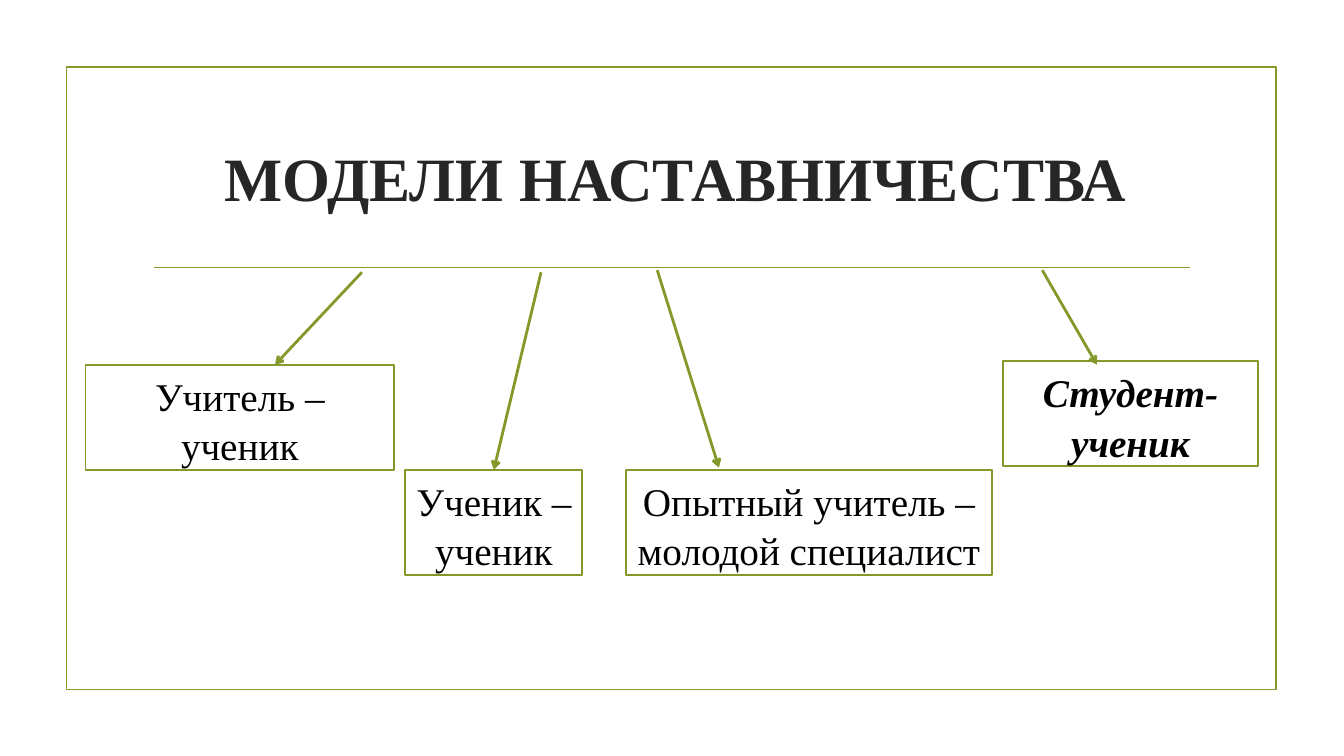
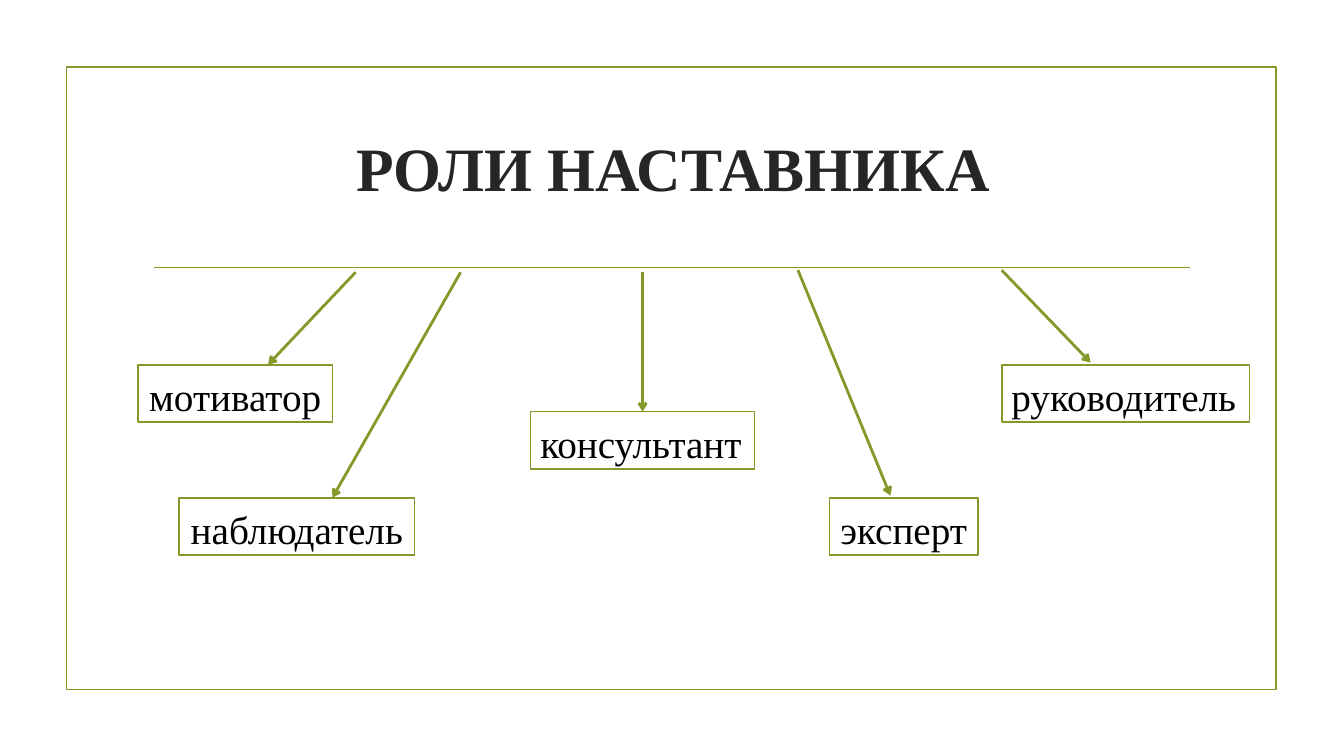
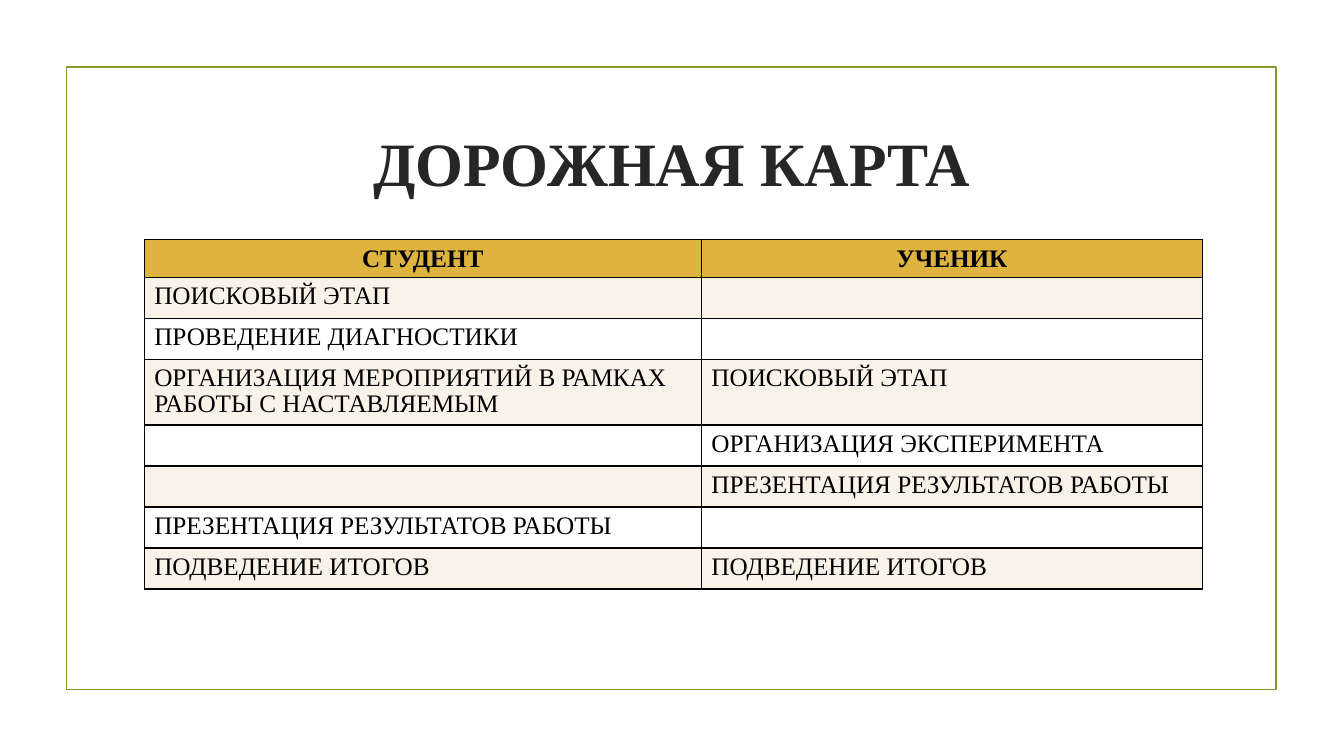
from lxml.etree import SubElement
from pptx import Presentation
from pptx.dml.color import RGBColor
from pptx.enum.shapes import MSO_CONNECTOR as Connector, MSO_SHAPE as Shape
from pptx.enum.text import MSO_ANCHOR as Anchor, PP_ALIGN as Align
from pptx.oxml.ns import qn
from pptx.util import Pt

FONT = "Times New Roman"
OLIVE, INK, BLACK, WHITE = "83992A", "262626", "000000", "FFFFFF"
GOLD, CREAM = "DEB340", "F9F2E8"
DIAGRAM_BOX = (48, 191, 864, 301)


def color(hex_string):
    """Return the colour for a hex string."""
    return RGBColor.from_string(hex_string)


def style(paragraph, size, ink=BLACK, align=Align.LEFT, bold=False, italic=False):
    """Set the alignment and font of a whole paragraph."""
    paragraph.alignment = align
    font = paragraph.font
    font.name, font.size, font.bold, font.italic = FONT, Pt(size), bold, italic
    font.color.rgb = color(ink)


def add_panel(slide, left, top, width, height, fill=None):
    """Add an olive-outlined rectangle."""
    panel = slide.shapes.add_shape(Shape.RECTANGLE, Pt(left), Pt(top), Pt(width), Pt(height))
    panel.shadow.inherit = False
    if fill:
        panel.fill.solid()
        panel.fill.fore_color.rgb = color(fill)
    else:
        panel.fill.background()
    panel.line.color.rgb = color(OLIVE)
    panel.line.width = Pt(1.25)
    return panel


def add_line(slide, start, end, width, arrow=False):
    """Add a straight olive line, with an arrowhead at its end if asked."""
    line = slide.shapes.add_connector(Connector.STRAIGHT, *map(Pt, start + end))
    line.line.color.rgb = color(OLIVE)
    line.line.width = Pt(width)
    if arrow:
        SubElement(line.line._get_or_add_ln(), qn("a:tailEnd"), type="arrow")
    SubElement(line.element.spPr, qn("a:effectLst"))
    return line


def decorate_layout(layout, slide):
    """Put the frame and the rule under the title on the shared layout."""
    frame = add_panel(slide, 47.5, 48, 864, 444.5)
    rule = add_line(slide, (110, 191), (850, 191), 1.25)
    for number, part in enumerate((frame, rule), 101):
        part.element.xpath(".//p:cNvPr")[0].set("id", str(number))
        layout.shapes.element.append(part.element)


def add_title(slide, text, box):
    """Fill and place the title placeholder."""
    title = slide.shapes.title
    title.left, title.top, title.width, title.height = map(Pt, box)
    title.text_frame.text = text
    title.text_frame.vertical_anchor = Anchor.MIDDLE
    style(title.text_frame.paragraphs[0], 44, INK, Align.CENTER, bold=True)


def add_branches(slide, box, height, branches):
    """Draw labelled boxes and the arrows that lead to them from the rule."""
    x, y = box[:2]
    for text, (left, top, width), start, tip, look in branches:
        label = add_panel(slide, x + left, y + top, width, height, WHITE)
        frame = label.text_frame
        frame.word_wrap = True
        frame.vertical_anchor = Anchor.TOP
        frame.margin_left = frame.margin_right = Pt(7)
        frame.text = text
        style(frame.paragraphs[0], 28, **{"align": Align.CENTER, **look})
        frame.paragraphs[0].line_spacing = 1.05
        end = tip or (left + width / 2, top)
        arrow = add_line(slide, (x + start[0], y + start[1]), (x + end[0], y + end[1]), 2, arrow=True)
        if tip is None:
            arrow.end_connect(label, 0)


def outline_cell(cell):
    """Give a cell thin black borders on all sides."""
    properties = cell._tc.get_or_add_tcPr()
    for position, side in enumerate(("lnL", "lnR", "lnT", "lnB")):
        border = SubElement(properties, qn(f"a:{side}"), w=str(Pt(1)))
        SubElement(SubElement(border, qn("a:solidFill")), qn("a:srgbClr"), val=BLACK)
        properties.insert(position, border)


def add_roadmap(slide, box, columns, heights, rows):
    """Build the two-column table of stages."""
    table = slide.shapes.add_table(len(rows), len(columns), *map(Pt, box)).table
    table.horz_banding = False
    for column, width in zip(table.columns, columns):
        column.width = Pt(width)
    for index, (row, height, texts) in enumerate(zip(table.rows, heights, rows)):
        row.height = Pt(height)
        header = index == 0
        for cell, text in zip(row.cells, texts):
            cell.text = text
            cell.margin_top, cell.margin_bottom = Pt(5), Pt(3)
            cell.fill.solid()
            cell.fill.fore_color.rgb = color(GOLD if header else CREAM if index % 2 else WHITE)
            outline_cell(cell)
            paragraph = cell.text_frame.paragraphs[0]
            paragraph.line_spacing = 0.93
            style(paragraph, 18, align=Align.CENTER if header else Align.LEFT, bold=header)


def main():
    """Build and save the presentation."""
    deck = Presentation()
    deck.slide_width, deck.slide_height = Pt(960), Pt(540)
    layout = deck.slide_layouts[5]
    models, roles, roadmap = (deck.slides.add_slide(layout) for _ in range(3))
    decorate_layout(layout, models)

    add_title(models, "МОДЕЛИ НАСТАВНИЧЕСТВА", (81, 74, 803, 105))
    add_branches(models, DIAGRAM_BOX, 75, [
        ("Учитель – ученик", (13, 69.5, 220.5), (210.5, 3.5), (148.5, 69.5), {}),
        ("Ученик – ученик", (241.5, 144.5, 126.5), (338.5, 3.5), None, {}),
        ("Опытный учитель – молодой специалист", (399, 144.5, 261.5), (421.5, 2), (465.5, 143), {}),
        ("Студент-ученик", (668.5, 67, 182), (696.5, 2), (735.5, 69.5), {"bold": True, "italic": True}),
    ])

    add_title(roles, "РОЛИ НАСТАВНИКА", (52, 50, 858, 138))
    add_branches(roles, DIAGRAM_BOX, 41, [
        ("мотиватор", (50.5, 69.5, 139), (206, 3.5), (143.5, 69.5), {}),
        ("наблюдатель", (80, 164.5, 168), (281, 3.5), (189.5, 164.5), {}),
        ("консультант", (331, 103, 160), (411, 3.5), None, {"align": Align.JUSTIFY}),
        ("эксперт", (544.5, 164.5, 106), (522, 2), (588, 163), {}),
        ("руководитель", (667.5, 69.5, 177), (667.5, 2), (731, 68), {"align": Align.LEFT}),
    ])

    add_title(roadmap, "ДОРОЖНАЯ КАРТА", (102, 64, 756, 103))
    add_roadmap(roadmap, (103, 171, 756, 250), (398, 358), (27, 29.3, 29.3, 47, 29.3, 29.3, 29.3, 29.3), [
        ("СТУДЕНТ", "УЧЕНИК"),
        ("ПОИСКОВЫЙ ЭТАП", ""),
        ("ПРОВЕДЕНИЕ ДИАГНОСТИКИ", ""),
        ("ОРГАНИЗАЦИЯ МЕРОПРИЯТИЙ В РАМКАХ РАБОТЫ С НАСТАВЛЯЕМЫМ", "ПОИСКОВЫЙ ЭТАП"),
        ("", "ОРГАНИЗАЦИЯ ЭКСПЕРИМЕНТА"),
        ("", "ПРЕЗЕНТАЦИЯ РЕЗУЛЬТАТОВ РАБОТЫ"),
        ("ПРЕЗЕНТАЦИЯ РЕЗУЛЬТАТОВ РАБОТЫ", ""),
        ("ПОДВЕДЕНИЕ ИТОГОВ", "ПОДВЕДЕНИЕ ИТОГОВ"),
    ])
    deck.save("out.pptx")


if __name__ == "__main__":
    main()
